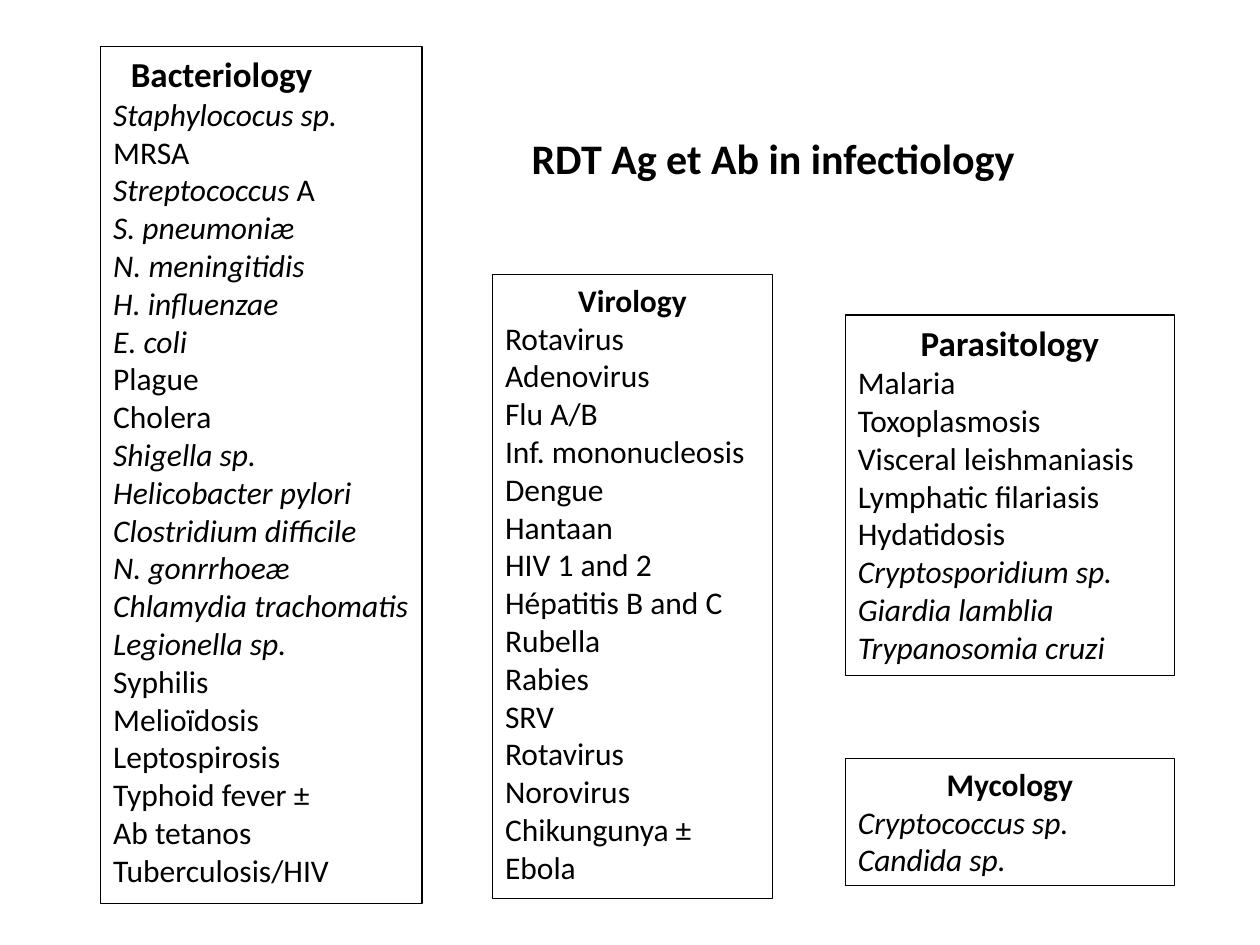
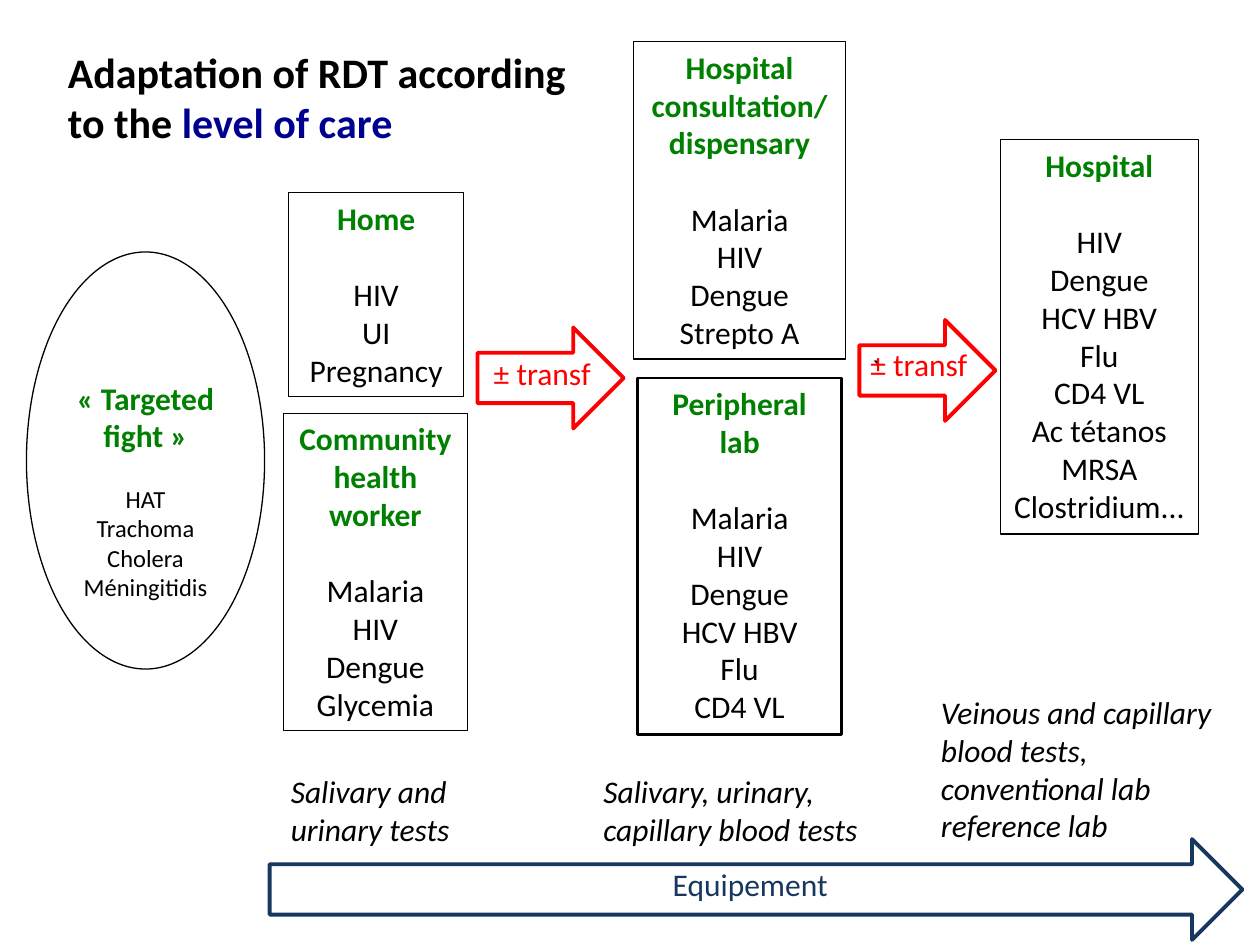
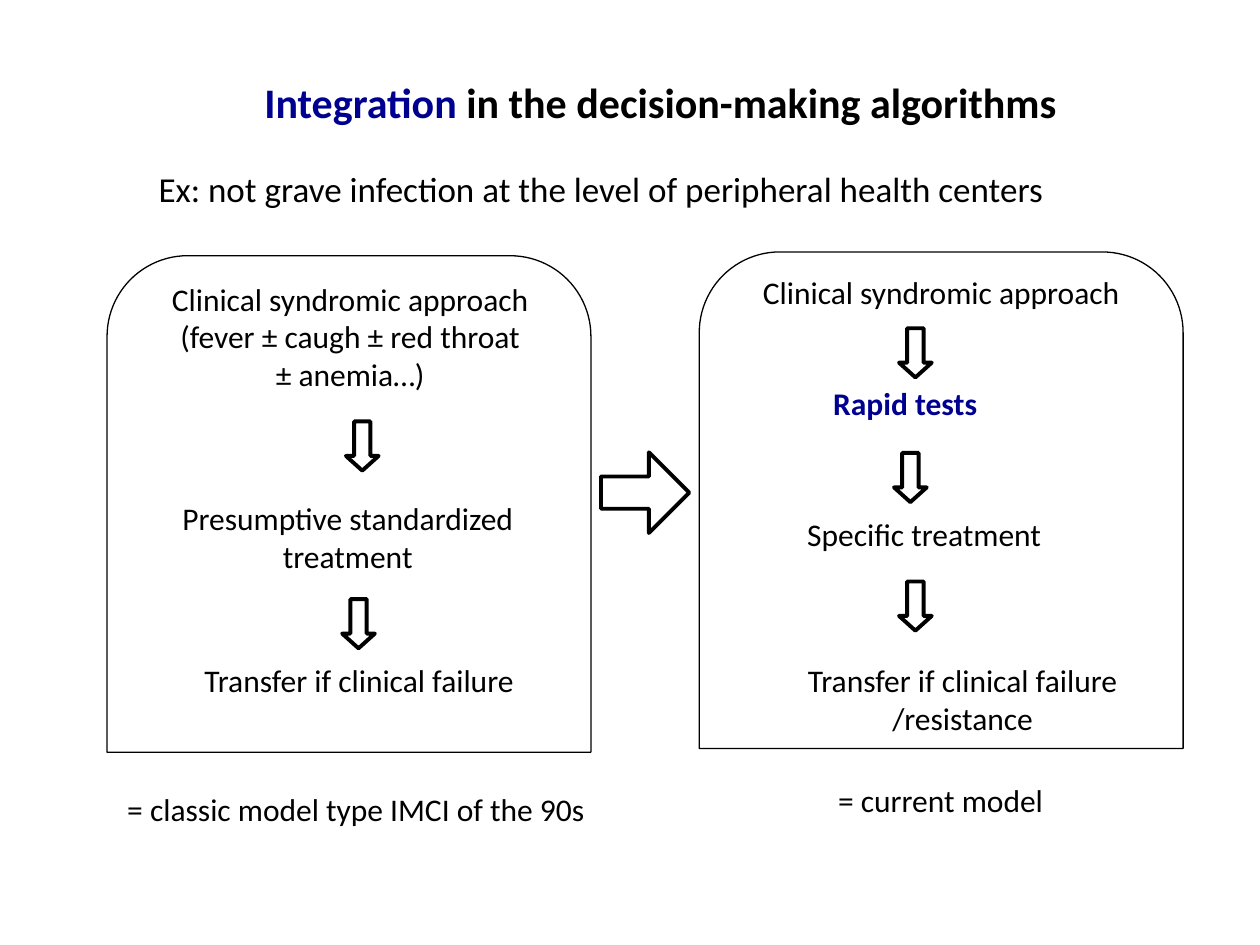
"""Build three slides on rapid diagnostic tests in infectiology."""
from collections import namedtuple

from pptx import Presentation
from pptx.dml.color import RGBColor
from pptx.enum.shapes import MSO_SHAPE as Preset
from pptx.enum.text import MSO_ANCHOR as Anchor, PP_ALIGN as Align
from pptx.util import Pt

PX = 9144
FONT = "Calibri"
BLACK = RGBColor(0x00, 0x00, 0x00)
GREEN = RGBColor(0x00, 0x80, 0x00)
NAVY = RGBColor(0x00, 0x00, 0x90)
STEEL = RGBColor(0x17, 0x37, 0x5E)
RED = RGBColor(0xFF, 0x00, 0x00)
THIN, MEDIUM, THICK = 0.75, 1.5, 2.25

Span = namedtuple("Span", "text size color bold italic", defaults=(18, BLACK, False, False))
Line = namedtuple("Line", "spans align gap indent", defaults=(Align.LEFT, 0, 0))


def species(name):
    return Span(name, italic=True)


def title(text, color=BLACK):
    return Span(text, 24, color, True)


def lines(*items, align=Align.LEFT, gap=0):
    """Turn strings, spans or lists of spans into lines, with a gap before the first."""
    result = []
    for index, item in enumerate(items):
        parts = item if isinstance(item, list) else [item]
        spans = [part if isinstance(part, Span) else Span(part) for part in parts]
        result.append(Line(spans, align, 0 if index else gap))
    return result


def centred(*items, gap=0):
    return lines(*items, align=Align.CENTER, gap=gap)


class Deck:
    """Hold the presentation, its style and the current slide."""

    def __init__(self, width, height):
        self.presentation = Presentation()
        self.presentation.slide_width = width * PX
        self.presentation.slide_height = height * PX
        self.slide = None

    def new_slide(self):
        self.slide = self.presentation.slides.add_slide(self.presentation.slide_layouts[6])

    def fill_text(self, shape, content, wrap=True, top=5):
        frame = shape.text_frame
        frame.word_wrap = wrap
        frame.vertical_anchor = Anchor.TOP
        frame.margin_left = frame.margin_right = 10 * PX
        frame.margin_top, frame.margin_bottom = top * PX, 5 * PX
        for index, line in enumerate(content):
            paragraph = frame.add_paragraph() if index else frame.paragraphs[0]
            paragraph.alignment = line.align
            if line.gap:
                paragraph.space_before = Pt(line.gap)
            if line.indent:
                paragraph._p.get_or_add_pPr().set("marL", str(line.indent * PX))
            for span in line.spans:
                run = paragraph.add_run()
                run.text = span.text
                run.font.name = FONT
                run.font.size = Pt(span.size)
                run.font.bold = span.bold
                run.font.italic = span.italic
                run.font.color.rgb = span.color

    def text(self, box, content, wrap=False):
        shape = self.slide.shapes.add_textbox(*(value * PX for value in box))
        self.fill_text(shape, content, wrap)

    def outline(self, preset, box, color=BLACK, weight=THIN, content=(), wrap=True, top=5):
        shape = self.slide.shapes.add_shape(preset, *(value * PX for value in box))
        shape.shadow.inherit = False
        shape.fill.background()
        shape.line.color.rgb = color
        shape.line.width = Pt(weight)
        self.fill_text(shape, content, wrap, top)
        return shape

    def arrow(self, box, color=BLACK, content=(), shaft=0.5, head=0.5):
        shape = self.outline(Preset.RIGHT_ARROW, box, color, THICK, content)
        shape.adjustments[0], shape.adjustments[1] = shaft, head
        return shape

    def step_arrow(self, left, top):
        self.arrow((left, top, 39, 26), head=0.45).rotation = 90

    def disease_list(self, box, heading, items, size=18, indent=0):
        align = Align.LEFT if indent else Align.CENTER
        head = Line([Span(heading, size, bold=True)], align, 0, indent)
        self.outline(Preset.RECTANGLE, box, content=[head, *lines(*items)])

    def care_level(self, box, headings, tests, weight=THIN, wrap=True):
        heads = centred(*(Span(text, color=GREEN, bold=True) for text in headings))
        content = heads + centred(*tests, gap=22)
        self.outline(Preset.RECTANGLE, box, weight=weight, content=content, wrap=wrap)


def build_test_lists(deck):
    deck.new_slide()
    deck.disease_list((671, 250, 261, 286), "Parasitology", [
        "Malaria", "Toxoplasmosis", "Visceral leishmaniasis", "Lymphatic filariasis",
        "Hydatidosis", species("Cryptosporidium sp."), species("Giardia lamblia"),
        species("Trypanosomia cruzi")], size=20)
    deck.disease_list((80, 37, 255, 680), "Bacteriology", [
        species("Staphylococus sp."), "MRSA", [species("Streptococcus"), " A"],
        *map(species, ("S. pneumoniæ", "N. meningitidis", "H. influenzae", "E. coli")),
        "Plague", "Cholera",
        *map(species, ("Shigella sp.", "Helicobacter pylori", "Clostridium difficile",
                       "N. gonrrhoeæ", "Chlamydia trachomatis", "Legionella sp.")),
        "Syphilis", "Melioïdosis", "Leptospirosis", "Typhoid fever ±", "Ab tetanos",
        "Tuberculosis/HIV"], size=20, indent=14)
    deck.disease_list((391, 218, 222, 495), "Virology", [
        "Rotavirus", "Adenovirus", "Flu A/B", "Inf. mononucleosis", "Dengue", "Hantaan",
        "HIV 1 and 2", "Hépatitis B and C", "Rubella", "Rabies", "SRV", "Rotavirus",
        "Norovirus", "Chikungunya ±", "Ebola"])
    deck.disease_list((671, 602, 261, 101), "Mycology",
                      [species("Cryptococcus sp."), species("Candida sp.")])
    deck.text((412, 100, 525, 50), lines(title("RDT Ag et Ab in infectiology")), wrap=True)


def build_levels_of_care(deck):
    deck.new_slide()
    deck.care_level((229, 153, 139, 162), ["Home"], ["HIV", "UI", "Pregnancy"])
    deck.care_level((225, 328, 146, 252), ["Community health worker"],
                    ["Malaria", "HIV", "Dengue", "Glycemia"])
    deck.care_level((503, 33, 168, 252), ["Hospital", "consultation/", "dispensary"],
                    ["Malaria", "HIV", "Dengue", "Strepto A"], wrap=False)
    deck.care_level((506, 300, 162, 283), ["Peripheral", "lab"],
                    ["Malaria", "HIV", "Dengue", "HCV HBV", "Flu", "CD4 VL"], weight=MEDIUM)
    deck.care_level((794, 111, 157, 313), ["Hospital"],
                    ["HIV", "Dengue", "HCV HBV", "Flu", "CD4 VL", "Ac tétanos", "MRSA",
                     "Clostridium..."], wrap=False)

    deck.text((469, 608, 231, 71),
              lines(species("Salivary, urinary,"), species("capillary blood tests")))
    deck.text((221, 608, 154, 71), lines(species("Salivary and"), species("urinary tests")))
    deck.text((737, 545, 250, 131),
              lines(species("Veinous and capillary blood tests, conventional lab"),
                    species("reference lab")), wrap=True)

    deck.arrow((214, 666, 772, 80), STEEL)
    deck.text((524, 682, 145, 40), lines(Span("Equipement", color=STEEL)))
    deck.arrow((682, 254, 108, 80), RED, lines("`"))
    deck.arrow((379, 260, 116, 80), RED)
    for left, top in ((382, 276), (681, 269)):
        deck.text((left, top, 99, 40), lines(Span("± transf", color=RED)))

    diseases = [Span(name, 14) for name in ("HAT", "Trachoma", "Cholera", "Méningitidis")]
    target = centred(Span("« Targeted fight »", color=GREEN, bold=True))
    deck.outline(Preset.OVAL, (21, 200, 189, 331),
                 content=target + centred(*diseases, gap=17), top=52)
    deck.text((44, 32, 421, 91), lines(title("Adaptation of RDT according"),
                                       [title("to the "), title("level of care", NAVY)]))


def build_algorithms(deck):
    deck.new_slide()
    for box, content in (
        ((121, 217, 314, 101), ["Clinical syndromic approach", "(fever ± caugh ± red throat",
                                "± anemia…)"]),
        ((132, 391, 288, 71), ["Presumptive standardized", "treatment"]),
        ((149, 520, 272, 40), ["Transfer if clinical failure"]),
        ((593, 212, 308, 40), ["Clinical syndromic approach"]),
        ((650, 300, 137, 40), [Span("Rapid tests", color=NAVY, bold=True)]),
        ((629, 404, 209, 40), ["Specific treatment"]),
        ((628, 520, 272, 71), ["Transfer if clinical failure", "/resistance"]),
        ((85, 622, 395, 40), ["= classic model type IMCI of the 90s"]),
        ((654, 615, 185, 40), ["= current model"]),
    ):
        deck.text(box, centred(*content))

    for left, top in ((555, 200), (85, 203)):
        deck.outline(Preset.ROUND_2_SAME_RECTANGLE, (left, top, 384, 394))
    deck.arrow((477, 359, 70, 64), shaft=0.4)
    for left, top in ((268, 341), (265, 482), (703, 366), (707, 468), (707, 267)):
        deck.step_arrow(left, top)

    deck.text((200, 56, 657, 50), lines([title("Integration", NAVY),
                                         title(" in the decision-making algorithms")]))
    example = "Ex: not grave infection at the level of peripheral health centers"
    deck.text((116, 128, 819, 44), lines(Span(example, 20)), wrap=True)


def main():
    deck = Deck(1000, 750)
    build_test_lists(deck)
    build_levels_of_care(deck)
    build_algorithms(deck)
    deck.presentation.save("out.pptx")


if __name__ == "__main__":
    main()
